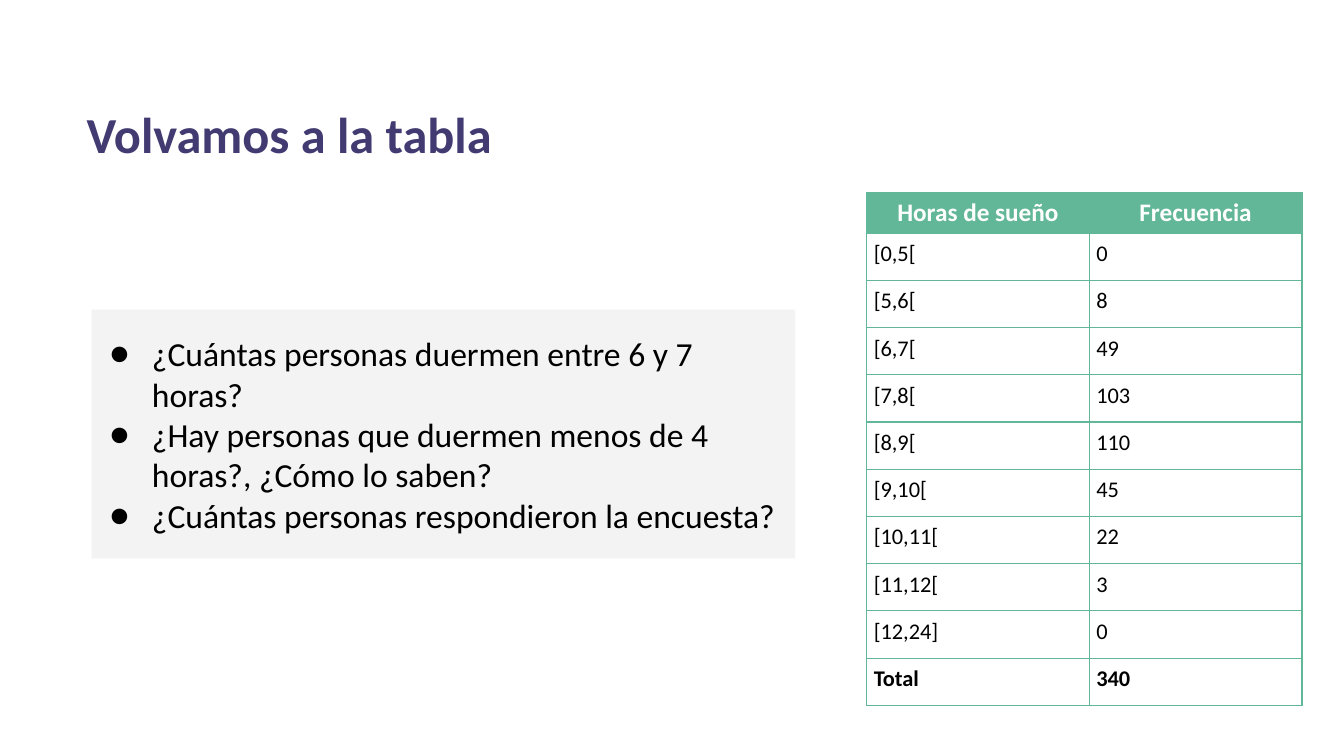
from lxml.etree import SubElement
from pptx import Presentation
from pptx.dml.color import RGBColor
from pptx.enum.shapes import MSO_SHAPE
from pptx.enum.text import MSO_ANCHOR, MSO_AUTO_SIZE, PP_ALIGN
from pptx.oxml.ns import qn
from pptx.util import Cm, Pt

TITLE = "Volvamos a la tabla"
QUESTIONS = [
    "¿Cuántas personas duermen entre 6 y 7 horas?",
    "¿Hay personas que duermen menos de 4 horas?, ¿Cómo lo saben?",
    "¿Cuántas personas respondieron la encuesta?",
]
SLEEP_TABLE = [
    ("Horas de sueño", "Frecuencia"),
    ("[0,5[", "0"),
    ("[5,6[", "8"),
    ("[6,7[", "49"),
    ("[7,8[", "103"),
    ("[8,9[", "110"),
    ("[9,10[", "45"),
    ("[10,11[", "22"),
    ("[11,12[", "3"),
    ("[12,24]", "0"),
    ("Total", "340"),
]
COLORS = {"title": "423B71", "green": "63B799", "panel": "F3F3F3",
          "text": "000000", "white": "FFFFFF"}
FONT = "Calibri"
COLUMN_WIDTHS = [Cm(5.61), Cm(5.36)]
HEADER_HEIGHT, ROW_HEIGHT = Cm(1), Cm(1.19)


def rgb(name):
    return RGBColor.from_string(COLORS[name])


def set_font(paragraph, size, color, bold=False):
    font = paragraph.font
    font.name, font.size, font.bold = FONT, Pt(size), bold
    font.color.rgb = rgb(color)


def set_margins(target, horizontal, vertical):
    target.margin_left = target.margin_right = horizontal
    target.margin_top = target.margin_bottom = vertical


def add_bullet(paragraph):
    properties = paragraph._p.get_or_add_pPr()
    properties.set("marL", str(Cm(1.27)))
    properties.set("indent", str(-Cm(1.07)))
    bullet_color = SubElement(properties, qn("a:buClr"))
    SubElement(bullet_color, qn("a:srgbClr"), val=COLORS["text"])
    SubElement(properties, qn("a:buFont"), typeface=FONT)
    SubElement(properties, qn("a:buChar"), char="●")


def add_borders(cell):
    properties = cell._tc.get_or_add_tcPr()
    for side in ("lnL", "lnR", "lnT", "lnB"):
        line = SubElement(properties, qn(f"a:{side}"), w=str(Pt(1)))
        fill = SubElement(line, qn("a:solidFill"))
        SubElement(fill, qn("a:srgbClr"), val=COLORS["green"])


def add_title(slide):
    title = slide.shapes.title
    title.left, title.top, title.width, title.height = Cm(1.93), Cm(2.46), Cm(22.68), Cm(1.8)
    frame = title.text_frame
    frame.text = TITLE
    frame.word_wrap = True
    frame.auto_size = MSO_AUTO_SIZE.SHAPE_TO_FIT_TEXT
    frame.vertical_anchor = MSO_ANCHOR.TOP
    set_margins(frame, Cm(0.25), Cm(0.13))
    paragraph = frame.paragraphs[0]
    paragraph.alignment = PP_ALIGN.LEFT
    set_font(paragraph, 36, "title", bold=True)


def add_questions(slide):
    panel = slide.shapes.add_shape(MSO_SHAPE.RECTANGLE, Cm(2.31), Cm(7.8), Cm(17.73), Cm(6.27))
    panel.shadow.inherit = False
    panel.fill.solid()
    panel.fill.fore_color.rgb = rgb("panel")
    panel.line.fill.background()
    frame = panel.text_frame
    frame.text = "\n".join(QUESTIONS)
    frame.word_wrap = True
    frame.vertical_anchor = MSO_ANCHOR.MIDDLE
    set_margins(frame, Cm(0.25), Cm(0.25))
    for paragraph in frame.paragraphs:
        paragraph.alignment = PP_ALIGN.LEFT
        add_bullet(paragraph)
        set_font(paragraph, 24, "text")


def add_sleep_table(slide):
    row_count = len(SLEEP_TABLE)
    height = HEADER_HEIGHT + ROW_HEIGHT * (row_count - 1)
    table = slide.shapes.add_table(row_count, len(COLUMN_WIDTHS), Cm(21.84), Cm(4.85),
                                   sum(COLUMN_WIDTHS), height).table
    table.horz_banding = False
    for column, width in zip(table.columns, COLUMN_WIDTHS):
        column.width = width
    for index, values in enumerate(SLEEP_TABLE):
        is_header, is_total = index == 0, index == row_count - 1
        table.rows[index].height = HEADER_HEIGHT if is_header else ROW_HEIGHT
        for cell, value in zip(table.rows[index].cells, values):
            cell.text = value
            paragraph = cell.text_frame.paragraphs[0]
            add_borders(cell)
            if is_header:
                cell.fill.solid()
                cell.fill.fore_color.rgb = rgb("green")
                cell.vertical_anchor = MSO_ANCHOR.MIDDLE
                set_margins(cell, Cm(0.25), Cm(0.13))
                paragraph.alignment = PP_ALIGN.CENTER
                set_font(paragraph, 18, "white", bold=True)
            else:
                cell.fill.background()
                set_margins(cell, Cm(0.18), Cm(0.18))
                set_font(paragraph, 16, "text", bold=is_total)


def main():
    presentation = Presentation()
    presentation.slide_width, presentation.slide_height = Cm(33.87), Cm(19.05)
    slide = presentation.slides.add_slide(presentation.slide_layouts[5])
    add_title(slide)
    add_questions(slide)
    add_sleep_table(slide)
    presentation.save("out.pptx")


if __name__ == "__main__":
    main()
